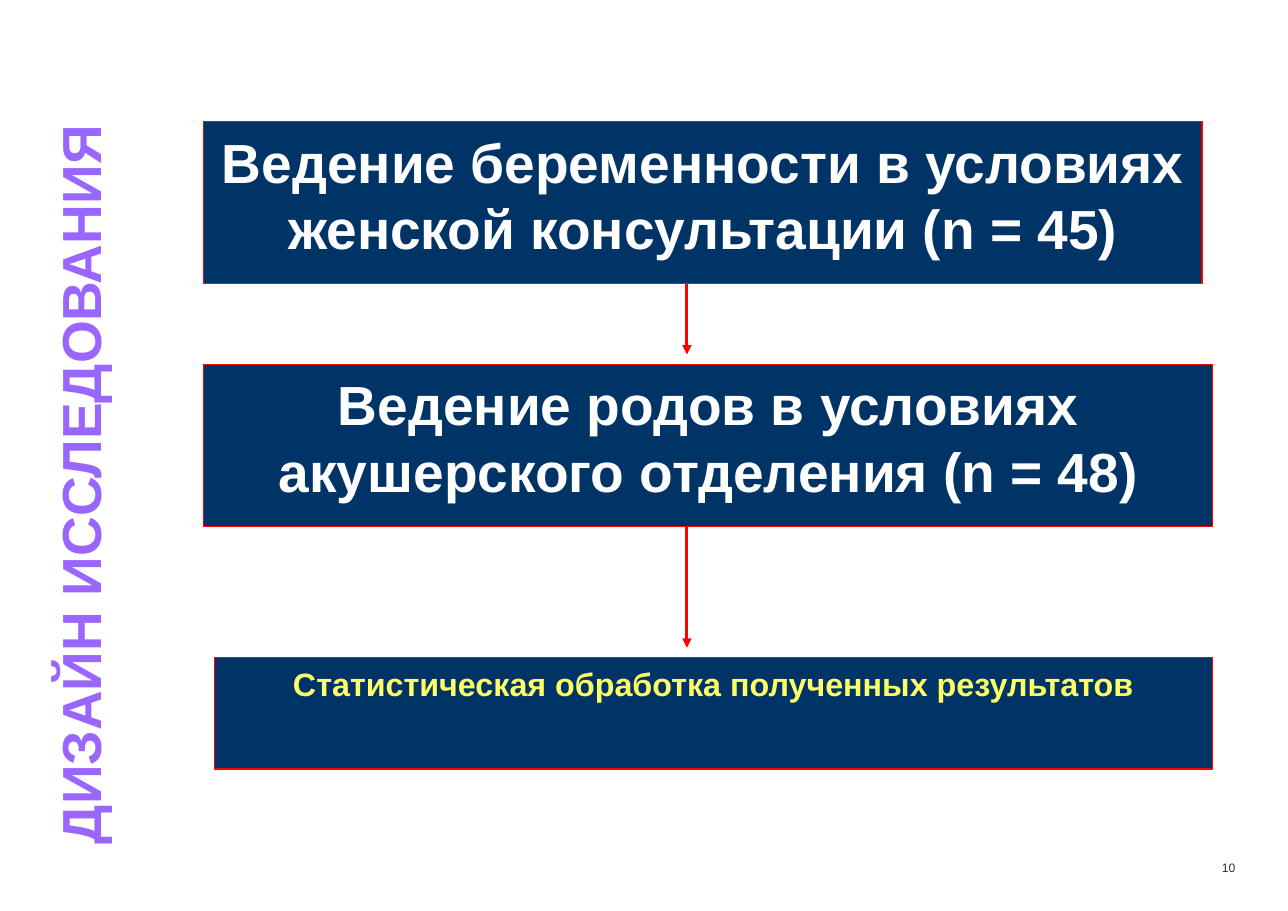
from lxml import etree
from pptx import Presentation
from pptx.dml.color import RGBColor
from pptx.enum.shapes import MSO_CONNECTOR, MSO_SHAPE
from pptx.enum.text import MSO_ANCHOR, MSO_AUTO_SIZE, PP_ALIGN
from pptx.oxml.ns import qn
from pptx.util import Cm, Pt

RECTANGLE = MSO_SHAPE.RECTANGLE
STRAIGHT = MSO_CONNECTOR.STRAIGHT
TOP, MIDDLE = MSO_ANCHOR.TOP, MSO_ANCHOR.MIDDLE
CENTER, RIGHT = PP_ALIGN.CENTER, PP_ALIGN.RIGHT

# Content
TITLE = "ДИЗАЙН ИССЛЕДОВАНИЯ"
PAGE_NUMBER = "10"
STAGES = [  # text, left, top, width, height (cm), text size, text colour
    ("Ведение беременности в условиях женской консультации (n = 45)",
     4.7, 2.8, 23.02, 3.73, 36, "FFFFFF"),
    ("Ведение родов в условиях акушерского отделения (n = 48)",
     4.7, 8.4, 23.27, 3.73, 36, "FFFFFF"),
    ("Статистическая обработка полученных результатов",
     4.95, 15.16, 23.02, 2.57, 21.1, "FFFF66"),
]

# Style
FONT = "Arial"
NAVY, RED, PURPLE, GREY = "003366", "FF0000", "9966FF", "313131"
ARROW_X, ARROW_GAP = 15.84, 0.23


def color(value):
    return RGBColor.from_string(value)


def place(shape, left, top, width, height):
    shape.left, shape.top = Cm(left), Cm(top)
    shape.width, shape.height = Cm(width), Cm(height)


def write(shape, text, size, text_color, bold=True, align=CENTER,
          anchor=TOP, insets=(0.28, 0.15)):
    frame = shape.text_frame
    frame.word_wrap = True
    frame.auto_size = MSO_AUTO_SIZE.NONE
    frame.vertical_anchor = anchor
    frame.margin_left = frame.margin_right = Cm(insets[0])
    frame.margin_top = frame.margin_bottom = Cm(insets[1])
    para = frame.paragraphs[0]
    para.alignment = align
    span = para.add_run()
    span.text = text
    span.font.name = FONT
    span.font.size = Pt(size)
    span.font.bold = bold
    span.font.color.rgb = color(text_color)


def add_stage(page, text, left, top, width, height, size, text_color):
    box = page.shapes.add_shape(RECTANGLE, Cm(left), Cm(top), Cm(width), Cm(height))
    box.shadow.inherit = False
    box.fill.solid()
    box.fill.fore_color.rgb = color(NAVY)
    box.line.color.rgb = color(RED)
    box.line.width = Pt(0.75)
    write(box, text, size, text_color)


def add_arrow(page, start, end):
    arrow = page.shapes.add_connector(
        STRAIGHT, Cm(ARROW_X), Cm(start), Cm(ARROW_X), Cm(end))
    arrow.line.color.rgb = color(RED)
    arrow.line.width = Pt(2)
    etree.SubElement(arrow.line._get_or_add_ln(), qn("a:tailEnd"), type="triangle")
    etree.SubElement(arrow._element.spPr, qn("a:effectLst"))


def main():
    deck = Presentation()
    deck.slide_width, deck.slide_height = Cm(29.7), Cm(21)
    page = deck.slides.add_slide(deck.slide_layouts[5])

    # Vertical title, turned to read from bottom to top
    title = page.shapes.title
    place(title, 0.76, 0.71, 2.13, 18.9)
    title.rotation = 180
    write(title, TITLE, 36, PURPLE, anchor=MIDDLE)
    title.text_frame._txBody.bodyPr.set("vert", "eaVert")

    # Study stages
    for stage in STAGES:
        add_stage(page, *stage)

    # Arrows from each stage to the next
    for upper, lower in zip(STAGES, STAGES[1:]):
        add_arrow(page, upper[2] + upper[4], lower[2] - ARROW_GAP)

    # Page number
    number = page.shapes.add_textbox(Cm(25.92), Cm(19.61), Cm(2.57), Cm(0.76))
    write(number, PAGE_NUMBER, 8, GREY, bold=False, align=RIGHT,
          anchor=MIDDLE, insets=(0, 0))

    deck.save("out.pptx")


if __name__ == "__main__":
    main()
